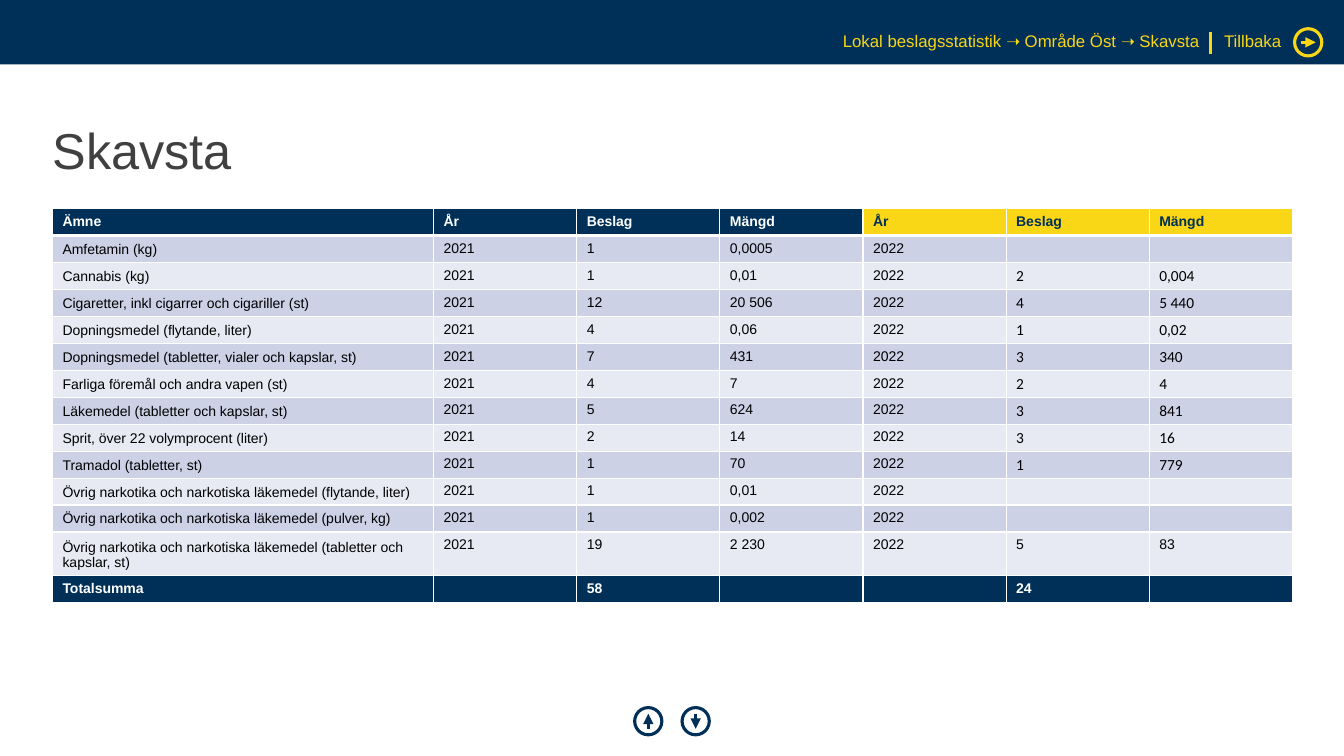
from dataclasses import dataclass

from lxml import etree
from pptx import Presentation
from pptx.dml.color import RGBColor
from pptx.enum.shapes import MSO_CONNECTOR, MSO_SHAPE
from pptx.enum.text import MSO_ANCHOR, PP_ALIGN
from pptx.oxml.ns import qn
from pptx.util import Inches, Pt

LEFT, RIGHT = PP_ALIGN.LEFT, PP_ALIGN.RIGHT
TOP, MIDDLE, BOTTOM = MSO_ANCHOR.TOP, MSO_ANCHOR.MIDDLE, MSO_ANCHOR.BOTTOM
STRAIGHT = MSO_CONNECTOR.STRAIGHT
RECTANGLE, OVAL = MSO_SHAPE.RECTANGLE, MSO_SHAPE.OVAL


@dataclass(frozen=True)
class Theme:
    navy: str = "003057"
    yellow: str = "F9D616"
    white: str = "FFFFFF"
    black: str = "000000"
    title_grey: str = "404040"
    bands: tuple = ("CCD1E6", "E7EAF3")
    font: str = "Arial"
    figure_font: str = "Calibri"
    title_size: int = 36
    link_size: int = 12
    table_size: int = 10
    figure_size: int = 11


THEME = Theme()

TITLE = "Skavsta"
BREADCRUMB = "Lokal beslagsstatistik ➝ Område Öst ➝ Skavsta"
BACK = "Tillbaka"
HEADER = ("Ämne", "År", "Beslag", "Mängd", "År", "Beslag", "Mängd")
YEARS = ("2021", "2022")
# Substance, then seizures and amount for each of the two years
SEIZURES = [
    ("Amfetamin (kg)", "1", "0,0005", "", ""),
    ("Cannabis (kg)", "1", "0,01", "2", "0,004"),
    ("Cigaretter, inkl cigarrer och cigariller (st)", "12", "20 506", "4", "5 440"),
    ("Dopningsmedel (flytande, liter)", "4", "0,06", "1", "0,02"),
    ("Dopningsmedel (tabletter, vialer och kapslar, st)", "7", "431", "3", "340"),
    ("Farliga föremål och andra vapen (st)", "4", "7", "2", "4"),
    ("Läkemedel (tabletter och kapslar, st)", "5", "624", "3", "841"),
    ("Sprit, över 22 volymprocent (liter)", "2", "14", "3", "16"),
    ("Tramadol (tabletter, st)", "1", "70", "1", "779"),
    ("Övrig narkotika och narkotiska läkemedel (flytande, liter)", "1", "0,01", "", ""),
    ("Övrig narkotika och narkotiska läkemedel (pulver, kg)", "1", "0,002", "", ""),
    ("Övrig narkotika och narkotiska läkemedel (tabletter och kapslar, st)",
     "19", "2 230", "5", "83"),
]
TOTALS = ("Totalsumma", "", "58", "", "", "24", "")

COLUMN_WIDTHS = [3.78] + [1.42] * 6
ROW_HEIGHT = 0.24
CIRCLE = 0.27
ARROW = 0.15
# Circle centre, direction of the arrow, colour
BUTTONS = [
    ((12.975, 0.42), (1, 0), THEME.yellow),
    ((6.9, 7.155), (0, 1), THEME.navy),
    ((6.43, 7.155), (0, -1), THEME.navy),
]


def rgb(color):
    return RGBColor.from_string(color)


def style_font(font, color, size, name=THEME.font, bold=False):
    font.name, font.size, font.bold = name, Pt(size), bold
    font.color.rgb = rgb(color)


def fill_frame(text_frame, text, color, size, align=LEFT, anchor=TOP):
    """Set one line of text in a frame without insets."""
    text_frame.text = text
    text_frame.word_wrap = True
    text_frame.vertical_anchor = anchor
    text_frame.margin_left = text_frame.margin_right = 0
    text_frame.margin_top = text_frame.margin_bottom = 0
    paragraph = text_frame.paragraphs[0]
    paragraph.alignment = align
    paragraph.line_spacing = 0.9
    style_font(paragraph.runs[0].font, color, size)


def add_link(slide, box, text, align=LEFT):
    shape = slide.shapes.add_textbox(*map(Inches, box))
    fill_frame(shape.text_frame, text, THEME.yellow, THEME.link_size, align)


def add_line(slide, start, end, color, width, arrow=False):
    line = slide.shapes.add_connector(STRAIGHT, *map(Inches, start + end))
    line.line.color.rgb = rgb(color)
    line.line.width = Pt(width)
    if arrow:
        etree.SubElement(line.line._get_or_add_ln(), qn("a:tailEnd"), type="triangle")
    etree.SubElement(line._element.spPr, qn("a:effectLst"))


def add_button(slide, centre, direction, color):
    start = tuple(c - d * ARROW / 2 for c, d in zip(centre, direction))
    end = tuple(c + d * ARROW / 2 for c, d in zip(centre, direction))
    add_line(slide, start, end, color, 2.5, arrow=True)
    corner = [Inches(c - CIRCLE / 2) for c in centre]
    circle = slide.shapes.add_shape(OVAL, *corner, Inches(CIRCLE), Inches(CIRCLE))
    circle.shadow.inherit = False
    circle.fill.background()
    circle.line.color.rgb = rgb(color)
    circle.line.width = Pt(2.25)


def set_borders(cell, bottom_width):
    """Add white cell borders, placed ahead of the fill as the format requires."""
    properties = cell._tc.get_or_add_tcPr()
    for index, side in enumerate(("lnL", "lnR", "lnT", "lnB")):
        width = bottom_width if side == "lnB" else 1
        border = etree.Element(qn(f"a:{side}"), w=str(Pt(width)))
        fill = etree.SubElement(border, qn("a:solidFill"))
        etree.SubElement(fill, qn("a:srgbClr"), val=THEME.white)
        properties.insert(index, border)


def fill_cell(cell, text, fill, color, bold, figure):
    cell.text = text
    cell.fill.solid()
    cell.fill.fore_color.rgb = rgb(fill)
    paragraph = cell.text_frame.paragraphs[0]
    if not text:
        # Keeps an empty cell from growing to the default type size
        etree.SubElement(paragraph._p, qn("a:endParaRPr"), sz=str(THEME.table_size * 100))
        return
    size, name = THEME.table_size, THEME.font
    if figure:
        size, name = THEME.figure_size, THEME.figure_font
        cell.vertical_anchor = MIDDLE
        cell.margin_top = cell.margin_right = Inches(0.01)
        cell.margin_bottom = 0
    style_font(paragraph.runs[0].font, color, size, name, bold)


def add_seizure_table(slide):
    body = [(name, YEARS[0], *counts[:2], YEARS[1], *counts[2:])
            for name, *counts in SEIZURES]
    rows = [HEADER, *body, TOTALS]
    last = len(rows) - 1
    frame = slide.shapes.add_table(
        len(rows), len(HEADER), Inches(0.52), Inches(2.07),
        Inches(sum(COLUMN_WIDTHS)), Inches(ROW_HEIGHT * len(rows)))
    table = frame.table
    for column, width in zip(table.columns, COLUMN_WIDTHS):
        column.width = Inches(width)
    for r, values in enumerate(rows):
        table.rows[r].height = Inches(ROW_HEIGHT)
        emphasis = r in (0, last)
        for c, text in enumerate(values):
            if r == 0 and c >= 4:
                fill, color = THEME.yellow, THEME.navy
            elif emphasis:
                fill, color = THEME.navy, THEME.white
            else:
                fill, color = THEME.bands[(r - 1) % 2], THEME.black
            cell = table.cell(r, c)
            if c == 0 and not emphasis:
                cell.vertical_anchor = BOTTOM
            figure = c >= 5 and 0 < r < last - 1
            fill_cell(cell, text, fill, color, emphasis, figure)
            set_borders(cell, 3 if r == 0 else 1)


def main():
    presentation = Presentation()
    presentation.slide_width, presentation.slide_height = Inches(13.33), Inches(7.5)
    slide = presentation.slides.add_slide(presentation.slide_layouts[5])

    bar = slide.shapes.add_shape(RECTANGLE, 0, 0, presentation.slide_width, Inches(0.64))
    bar.shadow.inherit = False
    bar.fill.solid()
    bar.fill.fore_color.rgb = rgb(THEME.navy)
    bar.line.fill.background()

    title = slide.shapes.title
    title.left, title.top, title.width, title.height = map(Inches, (0.52, 0.79, 12.28, 1.45))
    fill_frame(title.text_frame, TITLE, THEME.title_grey, THEME.title_size, anchor=MIDDLE)

    add_link(slide, (5.5, 0.33, 6.4, 0.19), BREADCRUMB, RIGHT)
    add_line(slide, (12.01, 0.32), (12.01, 0.54), THEME.yellow, 2.25)
    add_link(slide, (12.14, 0.33, 1.15, 0.19), BACK)
    add_seizure_table(slide)
    for centre, direction, color in BUTTONS:
        add_button(slide, centre, direction, color)

    presentation.save("out.pptx")


if __name__ == "__main__":
    main()
